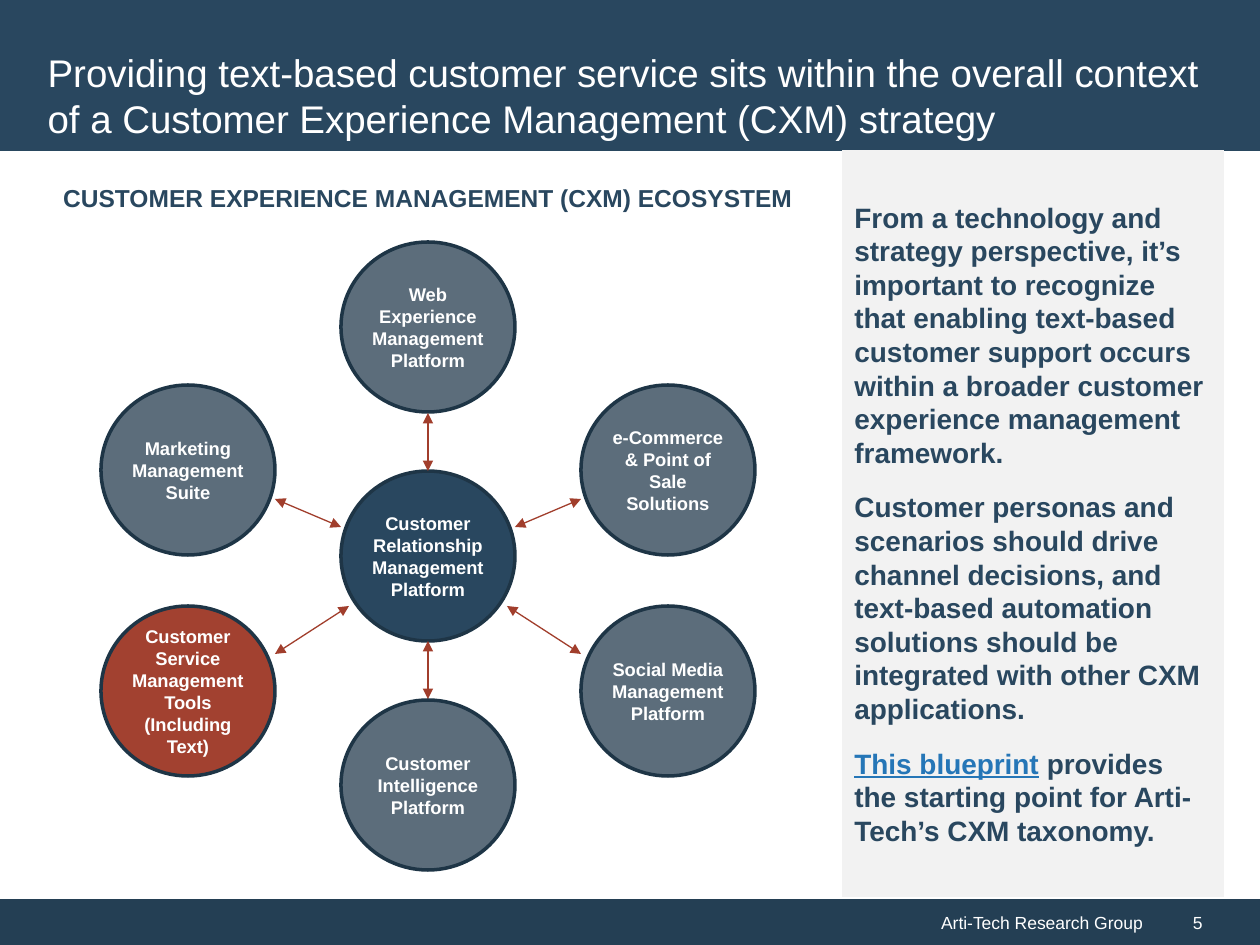
"""Build a slide on the customer experience management ecosystem."""
import pptx
import pptx.dml.color
import pptx.enum.shapes
import pptx.enum.text
import pptx.oxml.ns
import pptx.util
import lxml.etree

SCALE = 914400 / 126
FONT = "Arial"
COLORS = {
    "navy": "29475F",
    "footer": "243F54",
    "outline": "1E3546",
    "slate": "5C6D7B",
    "brick": "A24130",
    "arrow": "A13E2C",
    "panel": "F2F2F2",
    "link": "2576B7",
    "white": "FFFFFF",
}
ALIGN = pptx.enum.text.PP_ALIGN
ANCHOR = pptx.enum.text.MSO_ANCHOR
SHAPE = pptx.enum.shapes.MSO_SHAPE

HUB = ["Customer Relationship Management", "Platform"]
SATELLITES = [
    (["Web Experience Management", "Platform"], (0, -229), "slate", (0, -143), (0, -85)),
    (["e-Commerce & Point of Sale Solutions"], (240, -86), "slate", (153, -57), (87, -29)),
    (["Social Media Management", "Platform"], (240, 135), "slate", (153, 98), (79, 50)),
    (["Customer Intelligence", "Platform"], (0, 229), "slate", (0, 143), (0, 85)),
    (["Customer Service Management Tools (Including Text)"], (-240, 135), "brick",
     (-153, 98), (-79, 50)),
    (["Marketing Management", "Suite"], (-240, -86), "slate", (-153, -57), (-87, -29)),
]
MESSAGES = [
    [("From a technology and strategy perspective, it’s important to recognize that enabling "
      "text-based customer support occurs within a broader customer experience management "
      "framework.", "navy")],
    [("Customer personas and scenarios should drive channel decisions, and text-based automation "
      "solutions should be integrated with other CXM applications.", "navy")],
    [("This blueprint", "link"),
     (" provides the starting point for Arti-Tech’s CXM taxonomy.", "navy")],
]


def emu(*lengths):
    """Convert px lengths to EMU."""
    return [pptx.util.Emu(round(length * SCALE)) for length in lengths]


def rgb(name):
    """Look up a colour by name."""
    return pptx.dml.color.RGBColor.from_string(COLORS[name])


def write(frame, paragraphs, size, align=ALIGN.LEFT, bold=False, space=0):
    """Fill a text frame with paragraphs made of (text, colour) runs."""
    frame.word_wrap = True
    frame.auto_size = pptx.enum.text.MSO_AUTO_SIZE.NONE
    frame.vertical_anchor = ANCHOR.MIDDLE
    for index, runs in enumerate(paragraphs):
        paragraph = frame.add_paragraph() if index else frame.paragraphs[0]
        paragraph.alignment = align
        paragraph.space_before = paragraph.space_after = pptx.util.Pt(space)
        for text, color in runs:
            run = paragraph.add_run()
            run.text = text
            run.font.name = FONT
            run.font.size = pptx.util.Pt(size)
            run.font.bold = bold
            run.font.color.rgb = rgb(color)
            if color == "link":
                run.font.underline = True


def add_block(slide, kind, box, fill):
    """Add a flat filled shape without an outline."""
    block = slide.shapes.add_shape(kind, *emu(*box))
    block.shadow.inherit = False
    block.fill.solid()
    block.fill.fore_color.rgb = rgb(fill)
    block.line.fill.background()
    return block


def add_header(slide, box):
    """Place the title over its navy band."""
    left, top, width, height = box
    band = add_block(slide, SHAPE.RECTANGLE, box, "navy")
    title = slide.shapes.title
    title.element.addprevious(band.element)
    title.left, title.top, title.width, title.height = emu(
        left + 35, top + 39, width - 72, height - 34)
    write(title.text_frame, [[("Providing text-based customer service sits within the overall "
                               "context of a Customer Experience Management (CXM) strategy",
                               "white")]], 22)


def add_footer(slide, box):
    """Place the publisher name and the page number."""
    left, top, width, height = box
    number_width = 105
    split = width - number_width
    publisher = add_block(slide, SHAPE.RECTANGLE, (left, top, split, height), "footer")
    write(publisher.text_frame, [[("Arti-Tech Research Group", "white")]], 10, ALIGN.RIGHT)
    number = add_block(slide, SHAPE.RECTANGLE, (left + split, top, number_width, height), "footer")
    number.text_frame.margin_left = emu(38)[0]
    write(number.text_frame, [[("5", "white")]], 10)


def add_circle(slide, center, lines, fill):
    """Add one labelled platform circle around its center."""
    width, height = 174, 170
    x, y = center
    circle = add_block(slide, SHAPE.OVAL, (x - width / 2, y - height / 2, width, height), fill)
    circle.line.color.rgb = rgb("outline")
    circle.line.width = pptx.util.Pt(2)
    frame = circle.text_frame
    frame.margin_left = frame.margin_right = frame.margin_top = frame.margin_bottom = 0
    write(frame, [[(line, "white")] for line in lines], 10.5, ALIGN.CENTER, True)


def add_arrow(slide, start, end):
    """Add a thin arrow with a head at both ends."""
    arrow = slide.shapes.add_connector(
        pptx.enum.shapes.MSO_CONNECTOR.STRAIGHT, *emu(*start, *end))
    arrow.line.color.rgb = rgb("arrow")
    arrow.line.width = pptx.util.Pt(0.75)
    line = arrow.line._get_or_add_ln()
    for tag in ("a:headEnd", "a:tailEnd"):
        lxml.etree.SubElement(line, pptx.oxml.ns.qn(tag), type="triangle")
    lxml.etree.SubElement(arrow.element.spPr, pptx.oxml.ns.qn("a:effectLst"))


def add_ecosystem(slide, box):
    """Place the heading and the hub with its ring of satellites."""
    left, top, width, height = box
    heading = slide.shapes.add_textbox(*emu(left, top, width, 43))
    write(heading.text_frame, [[("CUSTOMER EXPERIENCE MANAGEMENT (CXM) ECOSYSTEM", "navy")]],
          14, ALIGN.CENTER, True)
    center = (left + width / 2, top + height - 314)

    def around(offset):
        """Shift the hub center by an offset."""
        return center[0] + offset[0], center[1] + offset[1]

    add_circle(slide, center, HUB, "navy")
    for lines, offset, fill, outer, inner in SATELLITES:
        add_circle(slide, around(offset), lines, fill)
        add_arrow(slide, around(outer), around(inner))


def add_message_panel(slide, box):
    """Place the side panel with the key messages."""
    panel = add_block(slide, SHAPE.RECTANGLE, box, "panel")
    write(panel.text_frame, MESSAGES, 16, bold=True, space=6)


def main():
    """Build and save the slide."""
    deck = pptx.Presentation()
    deck.slide_width, deck.slide_height = emu(1260, 945)
    slide = deck.slides.add_slide(deck.slide_layouts.get_by_name("Title Only"))
    add_header(slide, (0, -4, 1260, 155))
    add_footer(slide, (0, 899, 1260, 46))
    add_ecosystem(slide, (35, 176, 786, 694))
    add_message_panel(slide, (842, 150, 382, 747))
    deck.save("out.pptx")


if __name__ == "__main__":
    main()
